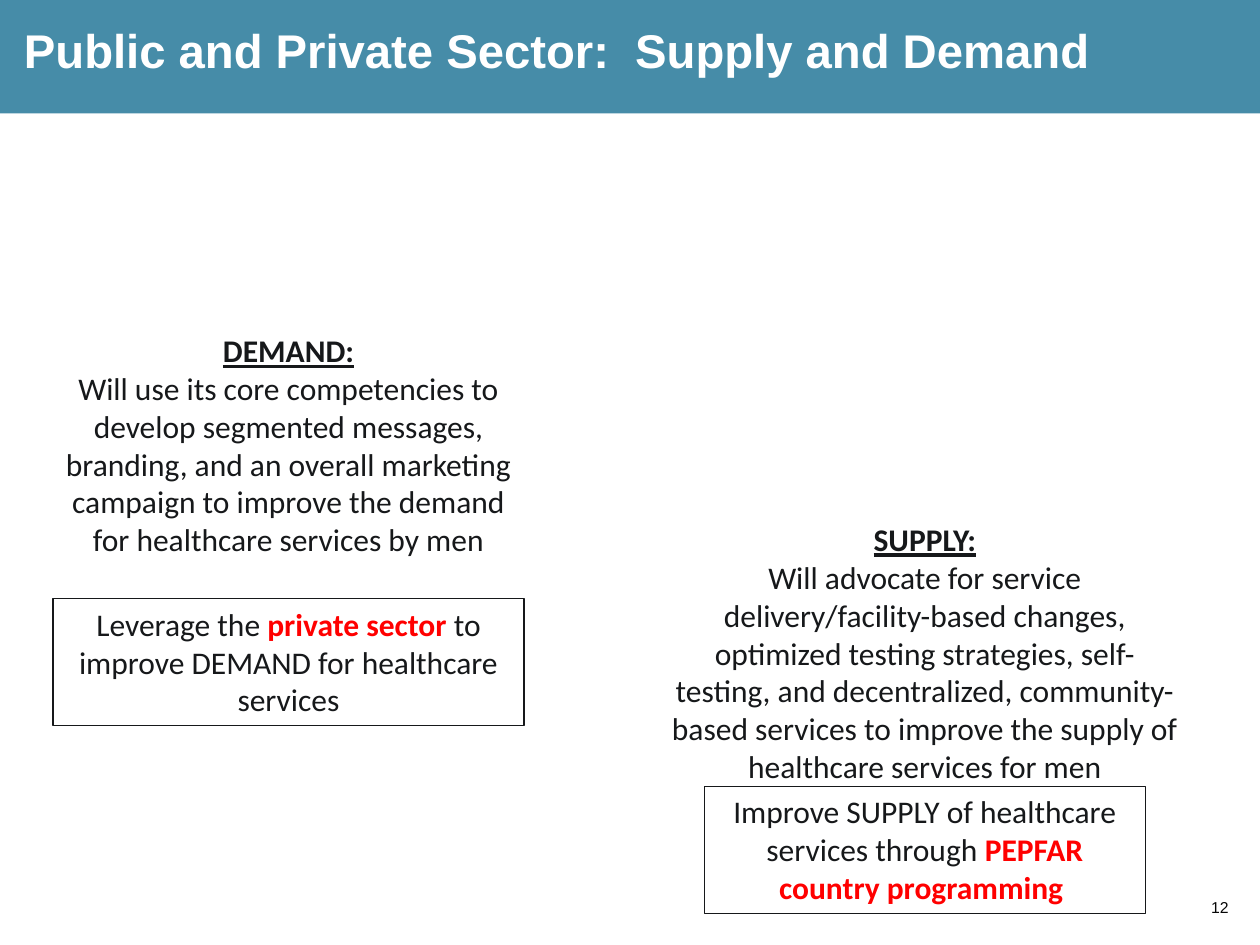
import pptx
import pptx.util
import pptx.dml.color
import pptx.enum.shapes
import pptx.enum.text

Inches, Pt = pptx.util.Inches, pptx.util.Pt
ALIGN = pptx.enum.text.PP_ALIGN
ANCHOR = pptx.enum.text.MSO_ANCHOR
RECT = pptx.enum.shapes.MSO_SHAPE.RECTANGLE

BAND, INK, RED, WHITE, NUMBER = "468CA8", "16181A", "FF0000", "FFFFFF", "060606"
WIDTH, HEIGHT = 10, 7.5
DEMAND_X = 0.229 * WIDTH
SUPPLY_X = 0.734 * WIDTH


def rgb(value):
    return pptx.dml.color.RGBColor.from_string(value)


def add_run(p, text, size=18, font="Calibri", color=INK, bold=False, underline=False):
    r = p.add_run()
    r.text = text
    r.font.size = Pt(size)
    r.font.name = font
    r.font.color.rgb = rgb(color)
    r.font.bold = bold
    r.font.underline = underline


def centred(center, top, width, height):
    """Box in inches, placed around the centre line of a column."""
    return [Inches(v) for v in (center - width / 2, top, width, height)]


def add_rect(s, box, fill=None, line=None):
    sp = s.shapes.add_shape(RECT, *box)
    sp.shadow.inherit = False
    if fill:
        sp.fill.solid()
        sp.fill.fore_color.rgb = rgb(fill)
    else:
        sp.fill.background()
    if line:
        sp.line.color.rgb = rgb(line)
        sp.line.width = Pt(0.75)
    else:
        sp.line.fill.background()
    return sp


def add_title(s, text):
    sp = s.shapes.title
    sp.left, sp.top, sp.width, sp.height = map(Inches, (0.19, 0.22, 9.59, 0.5))
    tf = sp.text_frame
    tf.margin_left = tf.margin_top = tf.margin_right = tf.margin_bottom = 0
    tf.auto_size = pptx.enum.text.MSO_AUTO_SIZE.NONE
    tf.vertical_anchor = ANCHOR.TOP
    p = tf.paragraphs[0]
    p.alignment = ALIGN.LEFT
    p.line_spacing = 0.9
    add_run(p, text, 27, "Arial", WHITE, bold=True)
    band = add_rect(s, [Inches(v) for v in (0, 0, WIDTH, 0.12 * HEIGHT)], fill=BAND)
    sp._element.addprevious(band._element)


def add_description(s, box, heading, text):
    tf = s.shapes.add_textbox(*box).text_frame
    tf.word_wrap = True
    p = tf.paragraphs[0]
    p.alignment = ALIGN.CENTER
    add_run(p, heading, bold=True, underline=True)
    p = tf.add_paragraph()
    p.alignment = ALIGN.CENTER
    add_run(p, text)


def add_callout(s, box, runs):
    """Outlined box; runs are (text, highlighted) pairs."""
    tf = add_rect(s, box, line=INK).text_frame
    tf.word_wrap = True
    tf.vertical_anchor = ANCHOR.TOP
    p = tf.paragraphs[0]
    p.alignment = ALIGN.CENTER
    for text, highlighted in runs:
        add_run(p, text, color=RED if highlighted else INK, bold=highlighted)


def add_slide_number(s, text):
    tf = s.shapes.add_textbox(*map(Inches, (9.37, 7, 0.48, 0.4))).text_frame
    tf.word_wrap = True
    tf.vertical_anchor = ANCHOR.MIDDLE
    p = tf.paragraphs[0]
    p.alignment = ALIGN.RIGHT
    add_run(p, text, 9, "Arial", NUMBER)


def main():
    prs = pptx.Presentation()
    prs.slide_width, prs.slide_height = Inches(WIDTH), Inches(HEIGHT)
    s = prs.slides.add_slide(prs.slide_layouts[5])
    add_title(s, "Public and Private Sector:  Supply and Demand")
    add_slide_number(s, "12")
    add_description(
        s, centred(SUPPLY_X, 4.08, 4.25, 2.17), "SUPPLY:",
        "Will advocate for service delivery/facility-based changes, optimized "
        "testing strategies, self-testing, and decentralized, community-based "
        "services to improve the supply of healthcare services for men")
    add_description(
        s, centred(DEMAND_X, 2.58, 3.92, 1.92), "DEMAND:",
        "Will use its core competencies to develop segmented messages, branding, "
        "and an overall marketing campaign to improve the demand for healthcare "
        "services by men")
    add_callout(s, centred(SUPPLY_X, 6.24, 3.5, 1.01), [
        ("Improve SUPPLY of healthcare services through ", False),
        ("PEPFAR country programming ", True)])
    add_callout(s, centred(DEMAND_X, 4.75, 3.74, 1.01), [
        ("Leverage the ", False),
        ("private sector ", True),
        ("to improve DEMAND for healthcare services", False)])
    prs.save("out.pptx")


if __name__ == "__main__":
    main()
